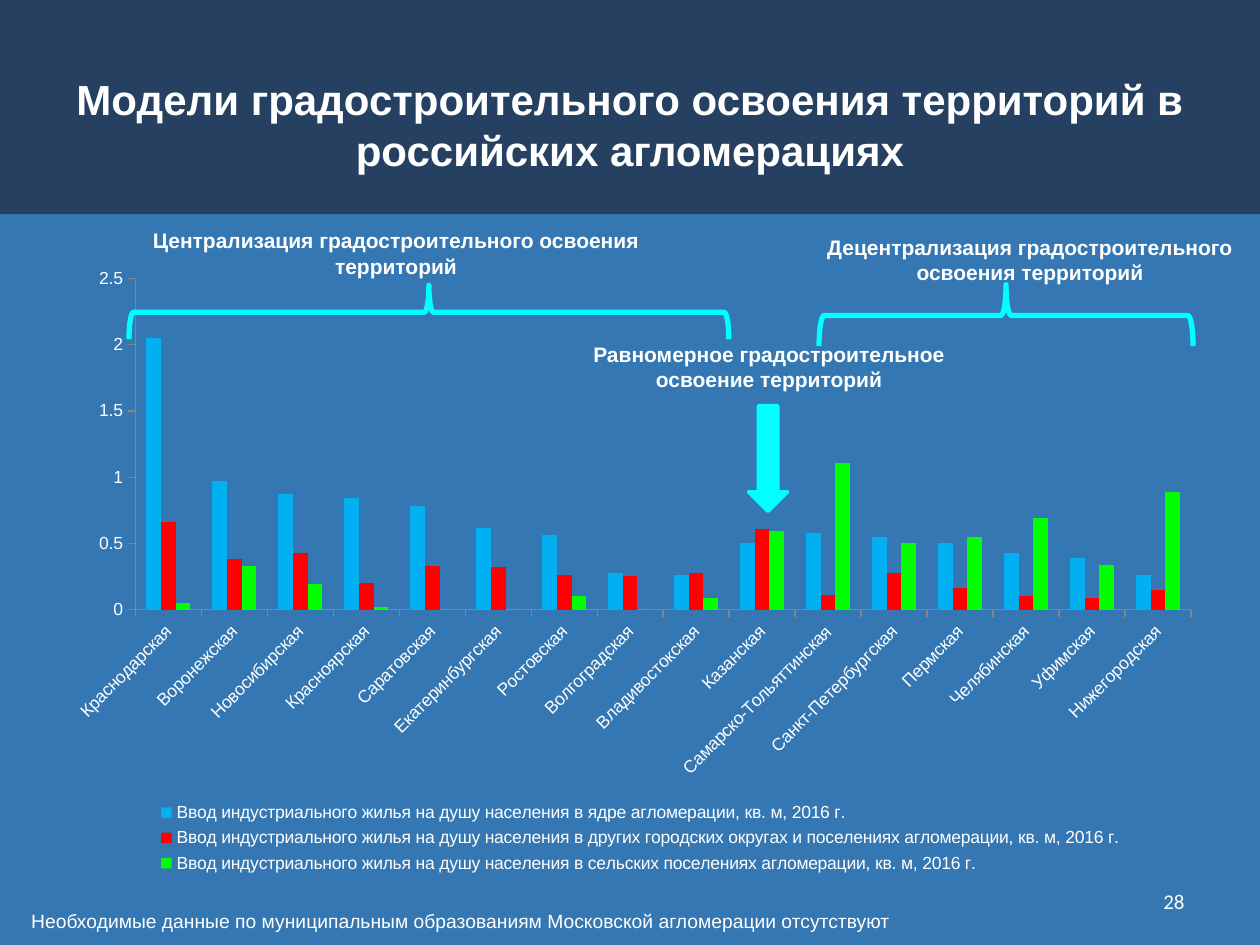
from lxml import etree
from pptx import Presentation
from pptx.chart.data import CategoryChartData
from pptx.dml.color import RGBColor
from pptx.enum.chart import XL_CHART_TYPE, XL_LEGEND_POSITION, XL_TICK_MARK
from pptx.enum.shapes import MSO_SHAPE
from pptx.enum.text import MSO_ANCHOR, PP_ALIGN
from pptx.oxml.ns import qn
from pptx.util import Cm, Pt

COLUMNS = XL_CHART_TYPE.COLUMN_CLUSTERED
BOTTOM = XL_LEGEND_POSITION.BOTTOM
OUTSIDE, NO_TICK = XL_TICK_MARK.OUTSIDE, XL_TICK_MARK.NONE
RECTANGLE = MSO_SHAPE.RECTANGLE
BRACE, ARROW = MSO_SHAPE.LEFT_BRACE, MSO_SHAPE.DOWN_ARROW
TOP, MIDDLE = MSO_ANCHOR.TOP, MSO_ANCHOR.MIDDLE
LEFT, CENTER, RIGHT = PP_ALIGN.LEFT, PP_ALIGN.CENTER, PP_ALIGN.RIGHT

BLUE, NAVY, WHITE, CYAN, GRAY = "3477B2", "254061", "FFFFFF", "00FFFF", "868686"

AGGLOMERATIONS = [
    "Краснодарская", "Воронежская", "Новосибирская", "Красноярская",
    "Саратовская", "Екатеринбургская", "Ростовская", "Волгоградская",
    "Владивостокская", "Казанская", "Самарско-Тольяттинская",
    "Санкт-Петербургская", "Пермская", "Челябинская", "Уфимская",
    "Нижегородская",
]
SERIES_NAME = "Ввод индустриального жилья на душу населения в {} агломерации, кв. м, 2016 г."
HOUSING = [
    ("ядре", "00B0F0",
     [2.05, 0.97, 0.87, 0.84, 0.78, 0.62, 0.56, 0.28,
      0.26, 0.5, 0.58, 0.55, 0.5, 0.43, 0.39, 0.26]),
    ("других городских округах и поселениях", "FF0000",
     [0.66, 0.38, 0.43, 0.2, 0.33, 0.32, 0.26, 0.25,
      0.28, 0.61, 0.11, 0.28, 0.16, 0.1, 0.09, 0.15]),
    ("сельских поселениях", "00FF00",
     [0.05, 0.33, 0.19, 0.02, 0, 0, 0.1, 0,
      0.09, 0.59, 1.11, 0.5, 0.55, 0.69, 0.34, 0.89]),
]


def color(value):
    return RGBColor.from_string(value)


def paint(fill, value):
    fill.solid()
    fill.fore_color.rgb = color(value)


def add_text(page, text, place, size, bold=False, align=LEFT, anchor=TOP, font="Arial"):
    box = page.shapes.add_textbox(*map(Cm, place))
    frame = box.text_frame
    frame.word_wrap = True
    frame.vertical_anchor = anchor
    para = frame.paragraphs[0]
    para.text = text
    para.alignment = align
    para.font.name = font
    para.font.size = Pt(size)
    para.font.bold = bold
    para.font.color.rgb = color(WHITE)
    return box


def add_figure(page, preset, place, fill=None, line=None, width=0, rotation=0):
    shape = page.shapes.add_shape(preset, *map(Cm, place))
    shape.shadow.inherit = False
    shape.rotation = rotation
    if fill:
        paint(shape.fill, fill)
    else:
        shape.fill.background()
    if line:
        shape.line.color.rgb = color(line)
        shape.line.width = Pt(width)
    else:
        shape.line.fill.background()


def set_layout(element, x, y, w, h, inner=False):
    """Fix the place of a chart part, in fractions of the chart."""
    for old in element.findall(qn("c:layout")):
        element.remove(old)
    layout = etree.Element(qn("c:layout"))
    manual = etree.SubElement(layout, qn("c:manualLayout"))
    settings = [("layoutTarget", "inner")] if inner else []
    settings += [("xMode", "edge"), ("yMode", "edge"),
                 ("x", x), ("y", y), ("w", w), ("h", h)]
    for tag, value in settings:
        etree.SubElement(manual, qn("c:" + tag)).set("val", str(value))
    # The layout comes first in the plot area, after the position in the legend
    position = element.find(qn("c:legendPos"))
    element.insert(0 if position is None else 1, layout)


def add_housing_chart(page, place):
    data = CategoryChartData()
    data.categories = AGGLOMERATIONS
    for area, _, values in HOUSING:
        data.add_series(SERIES_NAME.format(area), values)
    chart = page.shapes.add_chart(COLUMNS, *map(Cm, place), data).chart
    chart.has_title = False
    chart.font.name = "Arial"
    chart.font.size = Pt(10)
    chart.font.color.rgb = color(WHITE)

    # Columns
    plot = chart.plots[0]
    plot.gap_width = 150
    plot.overlap = 0
    plot.vary_by_categories = False
    for series, (_, fill, _) in zip(plot.series, HOUSING):
        paint(series.format.fill, fill)

    # Axes
    for axis in (chart.category_axis, chart.value_axis):
        axis.has_major_gridlines = False
        axis.major_tick_mark = OUTSIDE
        axis.minor_tick_mark = NO_TICK
        axis.format.line.color.rgb = color(GRAY)
    value_axis = chart.value_axis
    value_axis.minimum_scale, value_axis.maximum_scale = 0, 2.5
    value_axis.major_unit = 0.5
    labels = chart.category_axis.tick_labels
    labels.font.size = Pt(10)
    labels.font.color.rgb = color(WHITE)
    text_body = chart.category_axis._element.find(qn("c:txPr"))
    text_body.find(qn("a:bodyPr")).set("rot", "-2700000")

    # Legend and places of the parts
    chart.has_legend = True
    chart.legend.position = BOTTOM
    chart.legend.include_in_layout = False
    set_layout(chart.legend._element, 0.08, 0.87, 0.85, 0.13)
    plot_area = chart._chartSpace.find(".//" + qn("c:plotArea"))
    set_layout(plot_area, 0.07, 0.04, 0.91, 0.53, inner=True)


def main():
    deck = Presentation()
    deck.slide_width, deck.slide_height = Cm(25.4), Cm(19.05)
    page = deck.slides.add_slide(deck.slide_layouts[6])
    paint(page.background.fill, BLUE)

    add_housing_chart(page, (1.09, 5.11, 23.39, 12.6))

    # Title band
    add_figure(page, RECTANGLE, (0, 0, 25.4, 4.32), fill=NAVY)
    title = add_text(page, "Модели градостроительного освоения территорий в российских агломерациях",
                     (1.27, 0.38, 22.86, 3.18), 24, True, CENTER, MIDDLE)
    title.text_frame.margin_top = Cm(1.2)

    # Page number and note
    add_text(page, "28", (18.21, 17.65, 5.92, 1.02), 12,
             align=RIGHT, anchor=MIDDLE, font="Calibri")
    add_text(page, "Необходимые данные по муниципальным образованиям Московской агломерации отсутствуют",
             (0.38, 18.21, 22.5, 0.74), 11)

    # Braces over the groups of agglomerations
    for place in ((8.1, 0.25, 1.09, 12.09), (19.66, 2.59, 1.24, 7.54)):
        add_figure(page, BRACE, place, line=CYAN, width=3, rotation=90)

    # Names of the development models
    for text, place in (
        ("Централизация градостроительного освоения территорий", (2.69, 4.47, 10.59, 1.27)),
        ("Децентрализация градостроительного освоения территорий", (15.47, 4.6, 10.59, 1.27)),
        ("Равномерное градостроительное освоение территорий", (11.3, 6.76, 8.41, 1.27)),
    ):
        add_text(page, text, place, 12, True, CENTER)

    # Arrow to the evenly developed agglomeration
    add_figure(page, ARROW, (15.09, 8.18, 0.79, 2.13), CYAN, CYAN, 2)

    deck.save("out.pptx")


if __name__ == "__main__":
    main()
